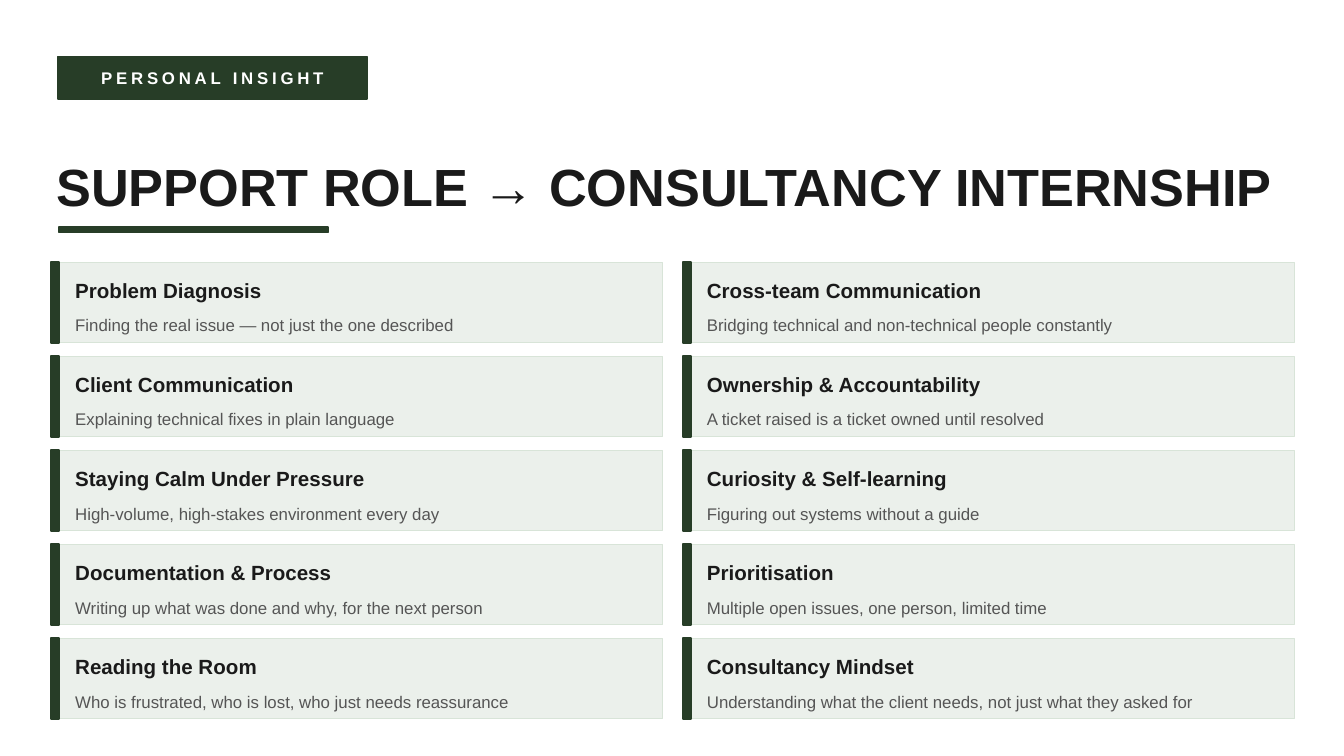
from pptx import Presentation
from pptx.dml.color import RGBColor
from pptx.enum.shapes import MSO_SHAPE
from pptx.enum.text import MSO_ANCHOR, MSO_AUTO_SIZE, PP_ALIGN
from pptx.util import Inches, Pt

GREEN, PALE, EDGE = "273D27", "EBF0EB", "D8E4D8"
INK, GREY, WHITE = "1A1A1A", "555555", "FFFFFF"

# Card texts, one list per column
COLUMNS = [
    [
        ("Problem Diagnosis", "Finding the real issue — not just the one described"),
        ("Client Communication", "Explaining technical fixes in plain language"),
        ("Staying Calm Under Pressure", "High-volume, high-stakes environment every day"),
        ("Documentation & Process", "Writing up what was done and why, for the next person"),
        ("Reading the Room", "Who is frustrated, who is lost, who just needs reassurance"),
    ],
    [
        ("Cross-team Communication", "Bridging technical and non-technical people constantly"),
        ("Ownership & Accountability", "A ticket raised is a ticket owned until resolved"),
        ("Curiosity & Self-learning", "Figuring out systems without a guide"),
        ("Prioritisation", "Multiple open issues, one person, limited time"),
        ("Consultancy Mindset", "Understanding what the client needs, not just what they asked for"),
    ],
]


def rgb(value):
    return RGBColor.from_string(value)


class SlideBuilder:
    font = "Arial"

    def __init__(self, slide):
        self.s = slide

    def background(self, color):
        fill = self.s.background.fill
        fill.solid()
        fill.fore_color.rgb = rgb(color)

    def rect(self, x, y, w, h, fill=GREEN, line=GREEN, weight=1):
        sp = self.s.shapes.add_shape(
            MSO_SHAPE.RECTANGLE, Inches(x), Inches(y), Inches(w), Inches(h))
        sp.shadow.inherit = False
        sp.fill.solid()
        sp.fill.fore_color.rgb = rgb(fill)
        sp.line.color.rgb = rgb(line)
        sp.line.width = Pt(weight)

    def text(self, x, y, w, h, text, size, color, bold=False,
             align=PP_ALIGN.LEFT, spacing=0):
        sp = self.s.shapes.add_textbox(Inches(x), Inches(y), Inches(w), Inches(h))
        tf = sp.text_frame
        tf.word_wrap = True
        tf.auto_size = MSO_AUTO_SIZE.SHAPE_TO_FIT_TEXT
        tf.vertical_anchor = MSO_ANCHOR.MIDDLE
        tf.margin_left = tf.margin_right = tf.margin_top = tf.margin_bottom = 0
        p = tf.paragraphs[0]
        p.alignment = align
        r = p.add_run()
        r.text = text
        r.font.name = self.font
        r.font.size = Pt(size)
        r.font.bold = bold
        r.font.color.rgb = rgb(color)
        if spacing:
            r._r.get_or_add_rPr().set("spc", str(spacing * 100))

    def card(self, x, y, title, detail):
        self.rect(x, y, 4.55, 0.6, PALE, EDGE, 0.5)
        self.rect(x, y, 0.06, 0.6)
        self.text(x + 0.18, y + 0.13, 3.2, 0.16, title, 11, INK, bold=True)
        self.text(x + 0.18, y + 0.4, 4.27, 0.14, detail, 9, GREY)


def main():
    # 16:9 slide, 10 inches wide
    prs = Presentation()
    prs.slide_width, prs.slide_height = Inches(10), Inches(10 * 9 / 16)
    b = SlideBuilder(prs.slides.add_slide(prs.slide_layouts[6]))
    b.background(WHITE)

    # Section tag
    b.rect(0.43, 0.42, 2.3, 0.32)
    b.text(0.43, 0.51, 2.3, 0.14, "PERSONAL INSIGHT", 9, WHITE, bold=True,
           align=PP_ALIGN.CENTER, spacing=2)

    # Title and underline
    b.text(0.42, 1.17, 9.37, 0.43, "SUPPORT ROLE → CONSULTANCY INTERNSHIP",
           28, INK, bold=True)
    b.rect(0.44, 1.69, 2, 0.04)

    # Skill cards
    for col, cards in enumerate(COLUMNS):
        for row, (title, detail) in enumerate(cards):
            b.card(0.38 + 4.7 * col, 1.95 + 0.7 * row, title, detail)

    prs.save("out.pptx")


if __name__ == "__main__":
    main()
